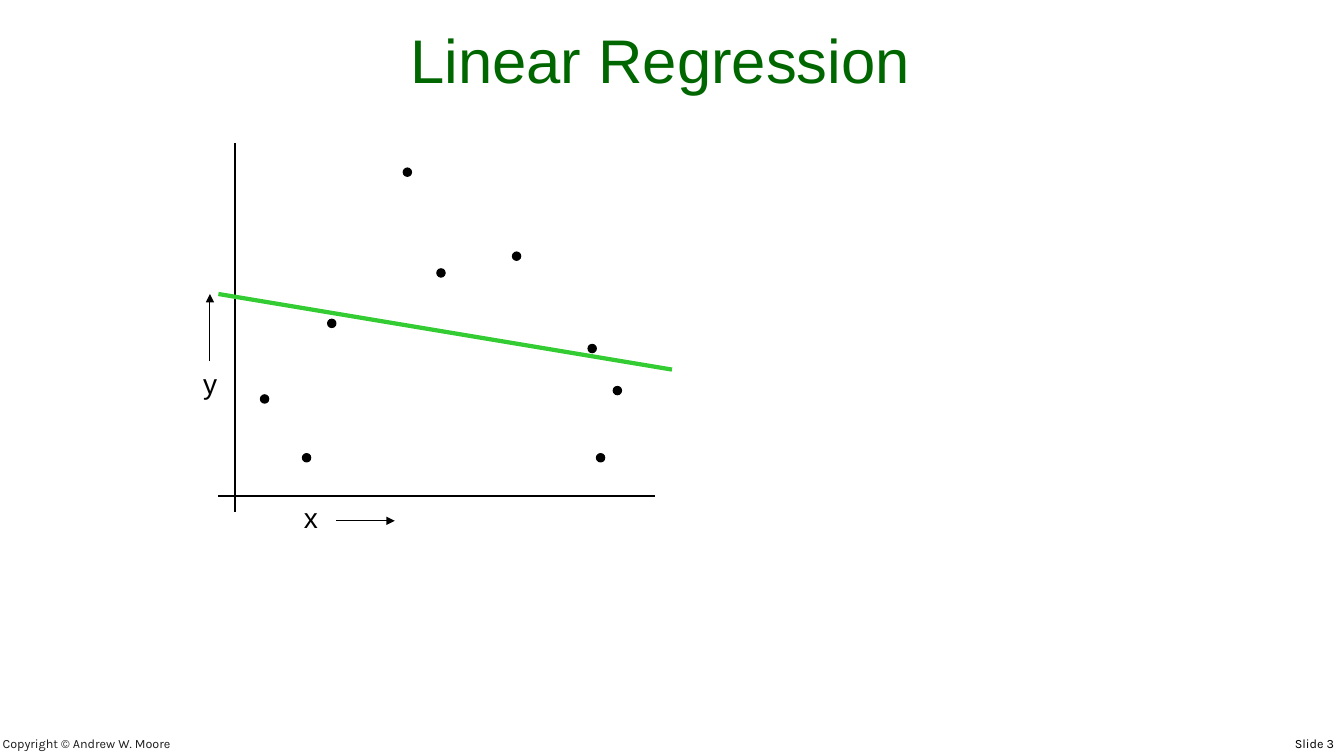
from dataclasses import dataclass

from lxml.etree import SubElement
from pptx import Presentation
from pptx.dml.color import RGBColor
from pptx.enum.shapes import MSO_CONNECTOR as Connector, MSO_SHAPE as Shape
from pptx.enum.text import MSO_ANCHOR as Anchor, PP_ALIGN as Align
from pptx.oxml.ns import qn
from pptx.slide import Slide
from pptx.util import Emu, Pt


@dataclass(frozen=True)
class Theme:
    title: RGBColor = RGBColor(0x00, 0x66, 0x00)
    ink: RGBColor = RGBColor(0x00, 0x00, 0x00)
    footer: RGBColor = RGBColor(0x1C, 0x1C, 0x1C)
    fit: RGBColor = RGBColor(0x33, 0xCC, 0x33)
    body_font: str = "Arial"
    footer_font: str = "Karla"
    title_size: int = 44
    label_size: int = 20
    footer_size: int = 9
    thin: float = 0.75
    axis: float = 1.5
    thick: float = 3


THEME = Theme()
EMU_PER_PX = 9525
DOT_SIZE = 8


@dataclass(frozen=True)
class Label:
    text: str
    left: int
    top: int
    width: int
    height: int
    size: int = THEME.label_size
    font: str = THEME.body_font
    color: RGBColor = THEME.ink
    align: Align = Align.LEFT
    anchor: Anchor = Anchor.TOP


@dataclass(frozen=True)
class Line:
    start: tuple[int, int]
    end: tuple[int, int]
    width: float
    color: RGBColor = THEME.ink
    arrow: bool = False


LABELS = [
    Label("Copyright © Andrew W. Moore", -7, 693, 710, 27, THEME.footer_size,
          THEME.footer_font, THEME.footer, anchor=Anchor.BOTTOM),
    Label("Slide 3", 779, 696, 501, 24, THEME.footer_size,
          THEME.footer_font, align=Align.RIGHT),
    Label("Linear Regression", 32, 16, 1194, 80, THEME.title_size,
          color=THEME.title, align=Align.CENTER, anchor=Anchor.BOTTOM),
    Label("x", 280, 472, 32, 41),
    Label("y", 184, 344, 32, 41),
]
AXES = [
    Line((224, 136), (224, 488), THEME.axis),
    Line((208, 472), (624, 472), THEME.axis),
]
DATA_POINTS = [
    (248, 376), (288, 432), (312, 304), (384, 160), (416, 256),
    (488, 240), (568, 432), (584, 368), (560, 328),
]
DIRECTION_ARROWS = [
    Line((320, 496), (376, 496), THEME.thin, arrow=True),
    Line((200, 344), (200, 280), THEME.thin, arrow=True),
]
FIT_LINE = Line((208, 280), (640, 352), THEME.thick, THEME.fit)


def px(value: int) -> Emu:
    return Emu(value * EMU_PER_PX)


def draw_label(slide: Slide, label: Label) -> None:
    box = slide.shapes.add_textbox(
        px(label.left), px(label.top), px(label.width), px(label.height))
    text_frame = box.text_frame
    text_frame.text = label.text
    text_frame.word_wrap = True
    text_frame.vertical_anchor = label.anchor
    paragraph = text_frame.paragraphs[0]
    paragraph.alignment = label.align
    font = paragraph.runs[0].font
    font.name = label.font
    font.size = Pt(label.size)
    font.color.rgb = label.color


def draw_line(slide: Slide, line: Line) -> None:
    connector = slide.shapes.add_connector(
        Connector.STRAIGHT, *map(px, line.start + line.end))
    connector.line.color.rgb = line.color
    connector.line.width = Pt(line.width)
    if line.arrow:
        SubElement(connector.line._get_or_add_ln(), qn("a:tailEnd"), type="triangle")
    SubElement(connector._element.spPr, qn("a:effectLst"))


def draw_data_point(slide: Slide, left: int, top: int) -> None:
    dot = slide.shapes.add_shape(
        Shape.OVAL, px(left), px(top), px(DOT_SIZE), px(DOT_SIZE))
    dot.shadow.inherit = False
    dot.fill.solid()
    dot.fill.fore_color.rgb = THEME.ink
    dot.line.color.rgb = THEME.ink
    dot.line.width = Pt(THEME.thin)


def main() -> None:
    presentation = Presentation()
    presentation.slide_width = px(1280)
    presentation.slide_height = px(720)
    slide = presentation.slides.add_slide(presentation.slide_layouts[6])
    for label in LABELS:
        draw_label(slide, label)
    for axis in AXES:
        draw_line(slide, axis)
    for left, top in DATA_POINTS:
        draw_data_point(slide, left, top)
    for line in [*DIRECTION_ARROWS, FIT_LINE]:
        draw_line(slide, line)
    presentation.save("out.pptx")


if __name__ == "__main__":
    main()
